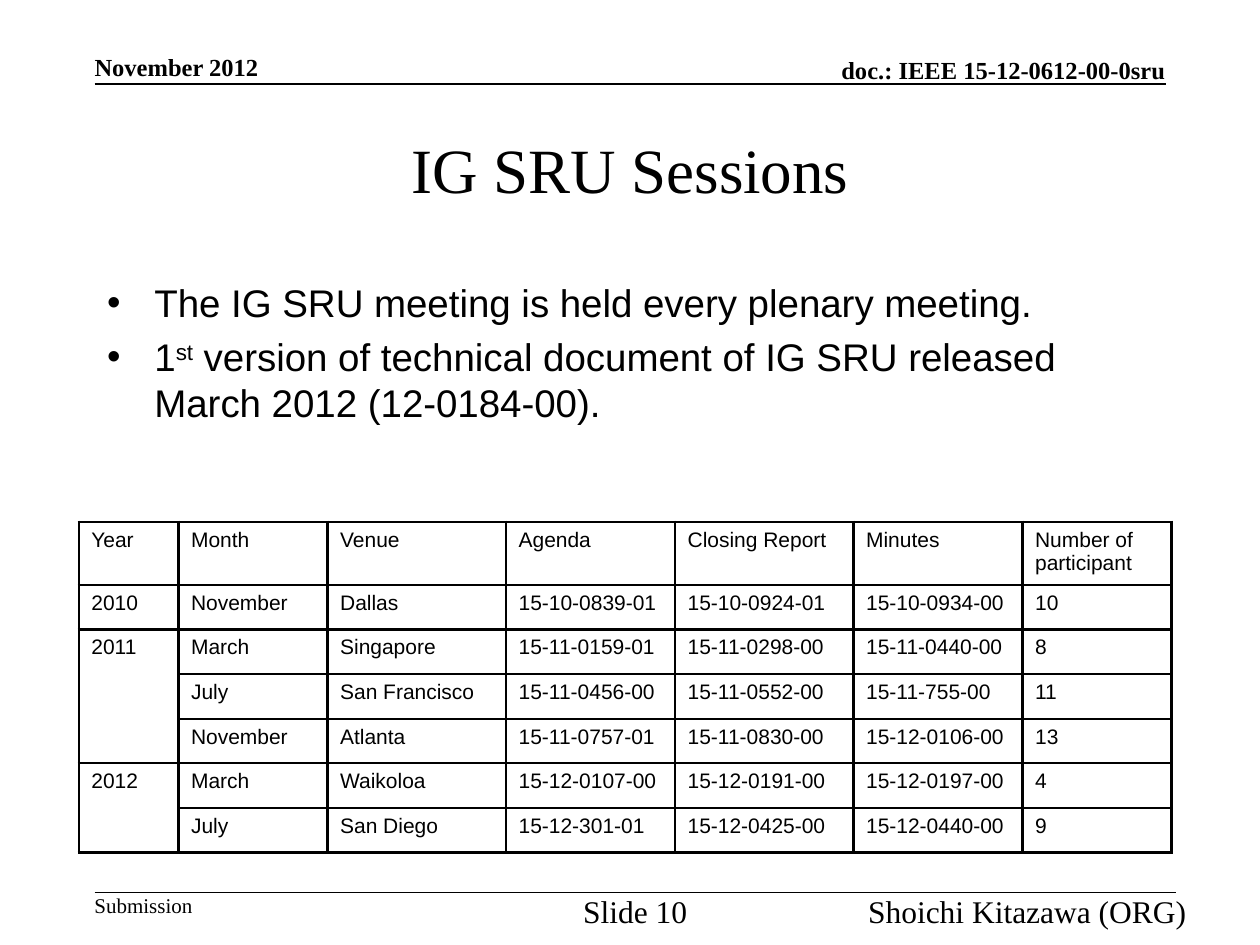
from dataclasses import dataclass

from lxml.etree import SubElement
from pptx import Presentation
from pptx.dml.color import RGBColor
from pptx.enum.shapes import MSO_CONNECTOR as Connector
from pptx.enum.text import MSO_ANCHOR as Anchor, MSO_AUTO_SIZE as AutoSize, PP_ALIGN as Align
from pptx.oxml import parse_xml
from pptx.oxml.ns import nsdecls, qn
from pptx.util import Inches, Pt


@dataclass(frozen=True)
class Theme:
    ink: RGBColor = RGBColor(0, 0, 0)
    paper: RGBColor = RGBColor(255, 255, 255)
    serif: str = "Times New Roman"
    sans: str = "Arial"
    title: int = 36
    body: int = 22
    footer: int = 18
    header: int = 14
    small: int = 12
    rule: float = 1
    border: float = 1.5


THEME = Theme()
GRID_COLUMNS, GRID_ROWS = 120, 90
WIDTH, HEIGHT = Inches(10), Inches(7.5)
LEFT, RIGHT = 9, 111
HEADER_RULE, FOOTER_RULE = 8, 85

BULLETS = [
    [("The IG SRU meeting is held every plenary meeting.", False)],
    [
        ("1", False),
        ("st", True),
        (" version of technical document of IG SRU released March 2012 (12-0184-00).", False),
    ],
]
COLUMN_WIDTHS = [9.5, 14.2, 17, 16.1, 17, 16.1, 14.2]
HEADER_HEIGHT, ROW_HEIGHT = 4.9, 4.25
SESSIONS = [
    ["Year", "Month", "Venue", "Agenda", "Closing Report", "Minutes", "Number of participant"],
    ["2010", "November", "Dallas", "15-10-0839-01", "15-10-0924-01", "15-10-0934-00", "10"],
    ["2011", "March", "Singapore", "15-11-0159-01", "15-11-0298-00", "15-11-0440-00", "8"],
    ["", "July", "San Francisco", "15-11-0456-00", "15-11-0552-00", "15-11-755-00", "11"],
    ["", "November", "Atlanta", "15-11-0757-01", "15-11-0830-00", "15-12-0106-00", "13"],
    ["2012", "March", "Waikoloa", "15-12-0107-00", "15-12-0191-00", "15-12-0197-00", "4"],
    ["", "July", "San Diego", "15-12-301-01", "15-12-0425-00", "15-12-0440-00", "9"],
]
YEAR_SPANS = [(2, 4), (5, 6)]


def across(columns):
    return round(WIDTH * columns / GRID_COLUMNS)


def down(rows):
    return round(HEIGHT * rows / GRID_ROWS)


def box(left, top, width, height):
    return across(left), down(top), across(width), down(height)


def style(paragraph, size, family, bold=False, align=None):
    font = paragraph.font
    font.size, font.name, font.bold = Pt(size), family, bold
    font.color.rgb = THEME.ink
    paragraph.alignment = align


def place(shape, left, top, width, height):
    shape.left, shape.top, shape.width, shape.height = box(left, top, width, height)
    shape.text_frame.auto_size = AutoSize.NONE


def add_title(slide, text):
    title = slide.shapes.title
    place(title, LEFT, 9, RIGHT - LEFT, 14)
    title.text_frame.text = text
    title.text_frame.vertical_anchor = Anchor.MIDDLE
    style(title.text_frame.paragraphs[0], THEME.title, THEME.serif, align=Align.CENTER)


def add_bullets(slide, items):
    body = slide.placeholders[1]
    place(body, LEFT, 26, RIGHT - LEFT, 27)
    frame = body.text_frame
    for index, pieces in enumerate(items):
        paragraph = frame.add_paragraph() if index else frame.paragraphs[0]
        style(paragraph, THEME.body, THEME.sans)
        for text, raised in pieces:
            run = paragraph.add_run()
            run.text = text
            if raised:
                run._r.get_or_add_rPr().set("baseline", "30000")


def add_label(slide, text, bounds, size, align=Align.LEFT, anchor=Anchor.TOP, bold=False):
    frame = slide.shapes.add_textbox(*box(*bounds)).text_frame
    frame.margin_left = frame.margin_right = frame.margin_top = frame.margin_bottom = 0
    frame.word_wrap = True
    frame.vertical_anchor = anchor
    frame.text = text
    style(frame.paragraphs[0], size, THEME.serif, bold, align)


def add_rule(slide, row, right):
    rule = slide.shapes.add_connector(
        Connector.STRAIGHT, across(LEFT), down(row), across(right), down(row)
    )
    rule.line.color.rgb = THEME.ink
    rule.line.width = Pt(THEME.rule)
    SubElement(rule._element.spPr, qn("a:effectLst"))


def set_borders(cell):
    properties = cell._tc.get_or_add_tcPr()
    for index, side in enumerate("LRTB"):
        border = parse_xml(
            f'<a:ln{side} {nsdecls("a")} w="{Pt(THEME.border)}"><a:solidFill>'
            f'<a:srgbClr val="{THEME.ink}"/></a:solidFill></a:ln{side}>'
        )
        properties.insert(index, border)


def fill_cell(cell, text):
    cell.fill.solid()
    cell.fill.fore_color.rgb = THEME.paper
    cell.text = text
    style(cell.text_frame.paragraphs[0], THEME.small, THEME.sans)
    set_borders(cell)


def add_sessions_table(slide):
    heights = [HEADER_HEIGHT] + [ROW_HEIGHT] * (len(SESSIONS) - 1)
    bounds = box(7.5, 49.7, sum(COLUMN_WIDTHS), sum(heights))
    table = slide.shapes.add_table(len(heights), len(COLUMN_WIDTHS), *bounds).table
    table.first_row = table.horz_banding = False
    for column, width in zip(table.columns, COLUMN_WIDTHS):
        column.width = across(width)
    for row, height, values in zip(table.rows, heights, SESSIONS):
        row.height = down(height)
        for cell, value in zip(row.cells, values):
            fill_cell(cell, value)
    for first, last in YEAR_SPANS:
        table.cell(first, 0).merge(table.cell(last, 0))


def add_header(slide):
    edge = {"anchor": Anchor.BOTTOM, "bold": True}
    add_label(slide, "November 2012", (LEFT, 4.92, 21, 2.88), THEME.header, **edge)
    add_label(slide, "doc.: IEEE 15-12-0612-00-0sru", (59, 5.16, 52, 2.88),
              THEME.header, Align.RIGHT, **edge)
    add_rule(slide, HEADER_RULE, RIGHT)


def add_footer(slide):
    add_rule(slide, FOOTER_RULE, 112)
    add_label(slide, "Submission", (LEFT, FOOTER_RULE, 12, 2.4), THEME.small)
    add_label(slide, "Slide 10", (54.5, FOOTER_RULE, 12, 3.4), THEME.footer, Align.CENTER)
    add_label(slide, "Shoichi Kitazawa (ORG)", (72, FOOTER_RULE, 41, 3.4),
              THEME.footer, Align.RIGHT)


def main():
    presentation = Presentation()
    presentation.slide_width, presentation.slide_height = WIDTH, HEIGHT
    slide = presentation.slides.add_slide(presentation.slide_layouts[1])
    slide.background.fill.solid()
    slide.background.fill.fore_color.rgb = THEME.paper
    add_header(slide)
    add_title(slide, "IG SRU Sessions")
    add_bullets(slide, BULLETS)
    add_sessions_table(slide)
    add_footer(slide)
    presentation.save("out.pptx")


if __name__ == "__main__":
    main()
